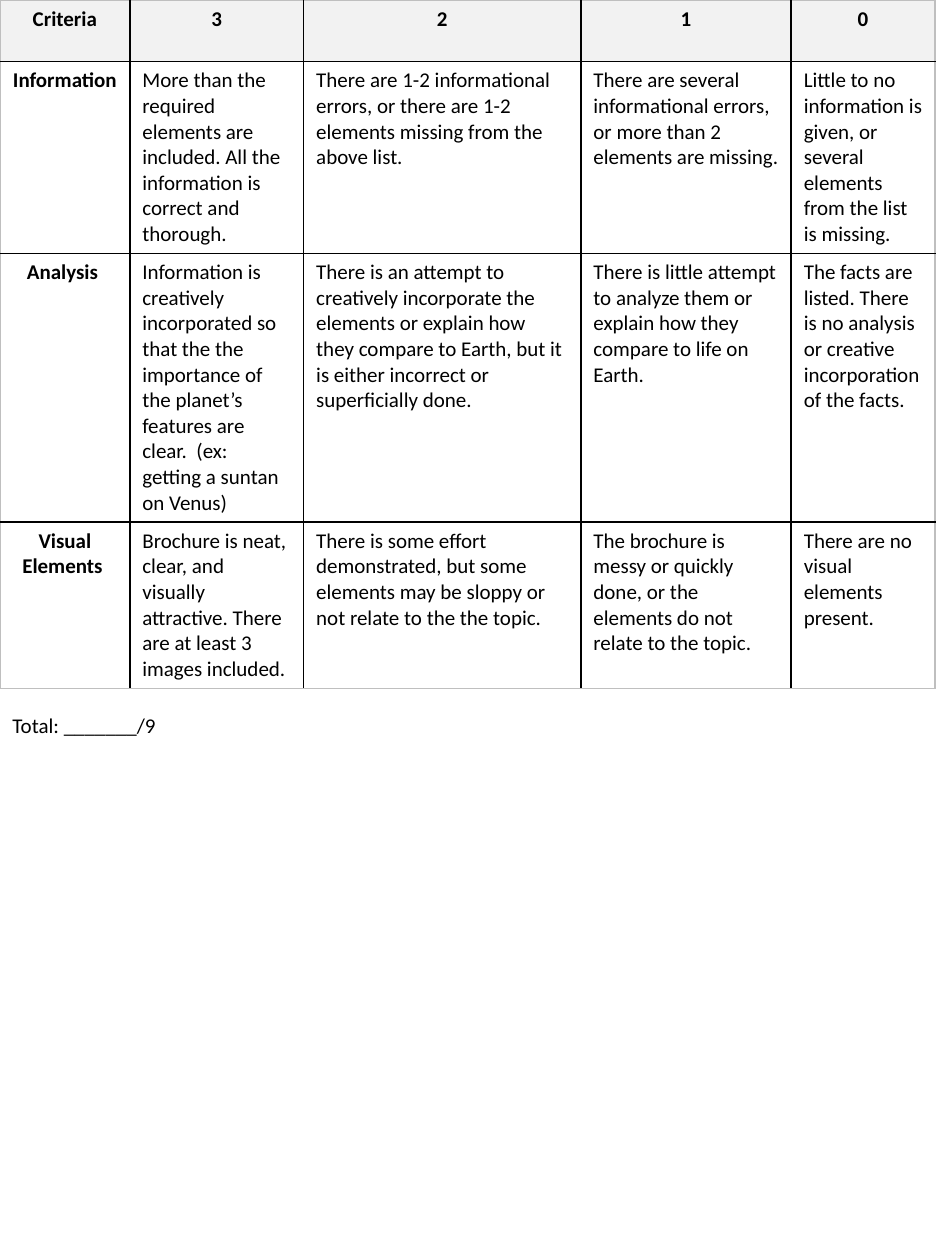
"""Build a one-page brochure grading rubric with a total line."""
from lxml import etree
from pptx import Presentation
from pptx.dml.color import RGBColor
from pptx.enum import text
from pptx.oxml import ns
from pptx.util import Inches, Pt

THEME = {"font": "Calibri", "size": 12, "ink": "000000", "header": "F2F2F2",
         "inner": "000000", "outer": "BFBFBF", "rule": 1}
SLIDE = (7.5, 10)
COLUMNS = (1.03, 1.38, 2.2, 1.67, 1.14)
ROWS = (0.49, 1.52, 2.13, 1.32)
TOTAL_BOX = (0, 5.61, 3.19, 0.3)

RUBRIC = [
    ("Criteria", "3", "2", "1", "0"),
    ("Information",
     "More than the required elements are included. All the information is correct and thorough.",
     "There are 1-2 informational errors, or there are 1-2 elements missing from the above list.",
     "There are several informational errors, or more than 2  elements are missing.",
     "Little to no information is given, or several elements from the list is missing."),
    ("Analysis ",
     "Information is creatively incorporated so that the the importance of the planet’s "
     "features are clear.  (ex: getting a suntan on Venus)",
     "There is an attempt to creatively incorporate the elements or explain how they compare "
     "to Earth, but it is either incorrect or superficially done.",
     "There is little attempt to analyze them or explain how they compare to life on Earth.",
     "The facts are listed. There is no analysis or creative incorporation of the facts."),
    ("Visual Elements ",
     "Brochure is neat, clear, and visually attractive. There are at least 3 images included.",
     "There is some effort demonstrated, but some elements may be sloppy or not relate to the the topic.",
     "The brochure is messy or quickly done, or the elements do not relate to the topic.",
     "There are no visual elements present."),
]
TOTAL = "Total: _______/9"


def write(frame, words, bold=False, centered=False):
    frame.text = words
    paragraph = frame.paragraphs[0]
    paragraph.alignment = text.PP_ALIGN.CENTER if centered else text.PP_ALIGN.LEFT
    font = paragraph.runs[0].font
    font.name, font.size, font.bold = THEME["font"], Pt(THEME["size"]), bold
    font.color.rgb = RGBColor.from_string(THEME["ink"])


def draw_borders(cell, outer_sides):
    properties = cell._tc.get_or_add_tcPr()
    for position, side in enumerate(("lnL", "lnR", "lnT", "lnB")):
        line = etree.Element(ns.qn(f"a:{side}"), w=str(Pt(THEME["rule"])))
        fill = etree.SubElement(line, ns.qn("a:solidFill"))
        color = THEME["outer" if side in outer_sides else "inner"]
        etree.SubElement(fill, ns.qn("a:srgbClr"), val=color)
        properties.insert(position, line)


def add_rubric(slide):
    rubric = slide.shapes.add_table(
        len(ROWS), len(COLUMNS), 0, 0, Inches(sum(COLUMNS)), Inches(sum(ROWS))).table
    for column, width in zip(rubric.columns, COLUMNS):
        column.width = Inches(width)
    for row, height in zip(rubric.rows, ROWS):
        row.height = Inches(height)
    for r, entries in enumerate(RUBRIC):
        for c, entry in enumerate(entries):
            cell = rubric.cell(r, c)
            heading = r == 0 or c == 0
            write(cell.text_frame, entry, heading, heading)
            if r == 0:
                cell.fill.solid()
                cell.fill.fore_color.rgb = RGBColor.from_string(THEME["header"])
            else:
                cell.fill.background()
            edges = {"lnL": c == 0, "lnR": c == len(COLUMNS) - 1,
                     "lnT": r == 0, "lnB": r == len(ROWS) - 1}
            draw_borders(cell, [side for side, outer in edges.items() if outer])


def main():
    deck = Presentation()
    deck.slide_width, deck.slide_height = map(Inches, SLIDE)
    slide = deck.slides.add_slide(deck.slide_layouts[6])
    add_rubric(slide)
    total = slide.shapes.add_textbox(*map(Inches, TOTAL_BOX)).text_frame
    total.word_wrap = True
    total.auto_size = text.MSO_AUTO_SIZE.SHAPE_TO_FIT_TEXT
    write(total, TOTAL)
    deck.save("out.pptx")


if __name__ == "__main__":
    main()
